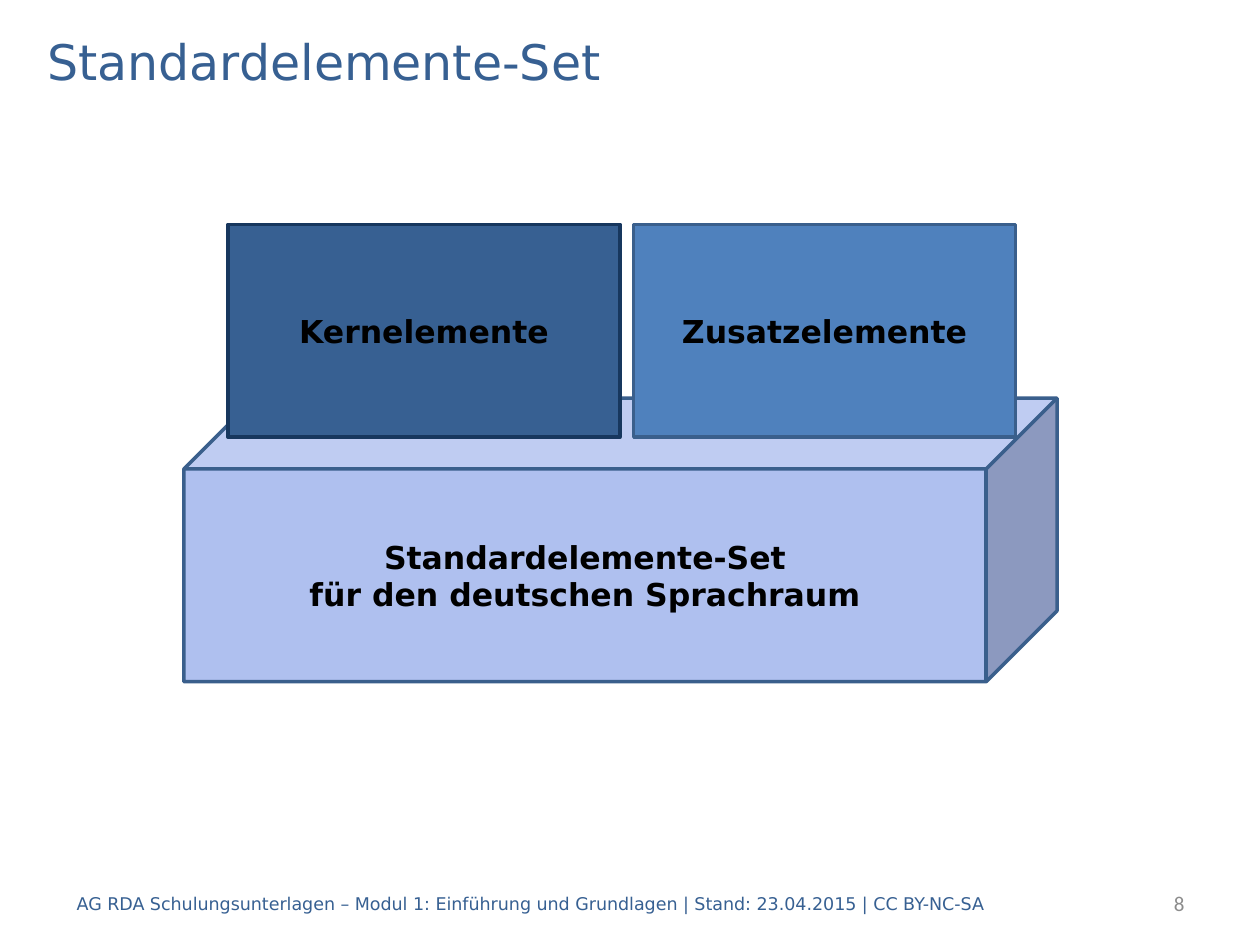
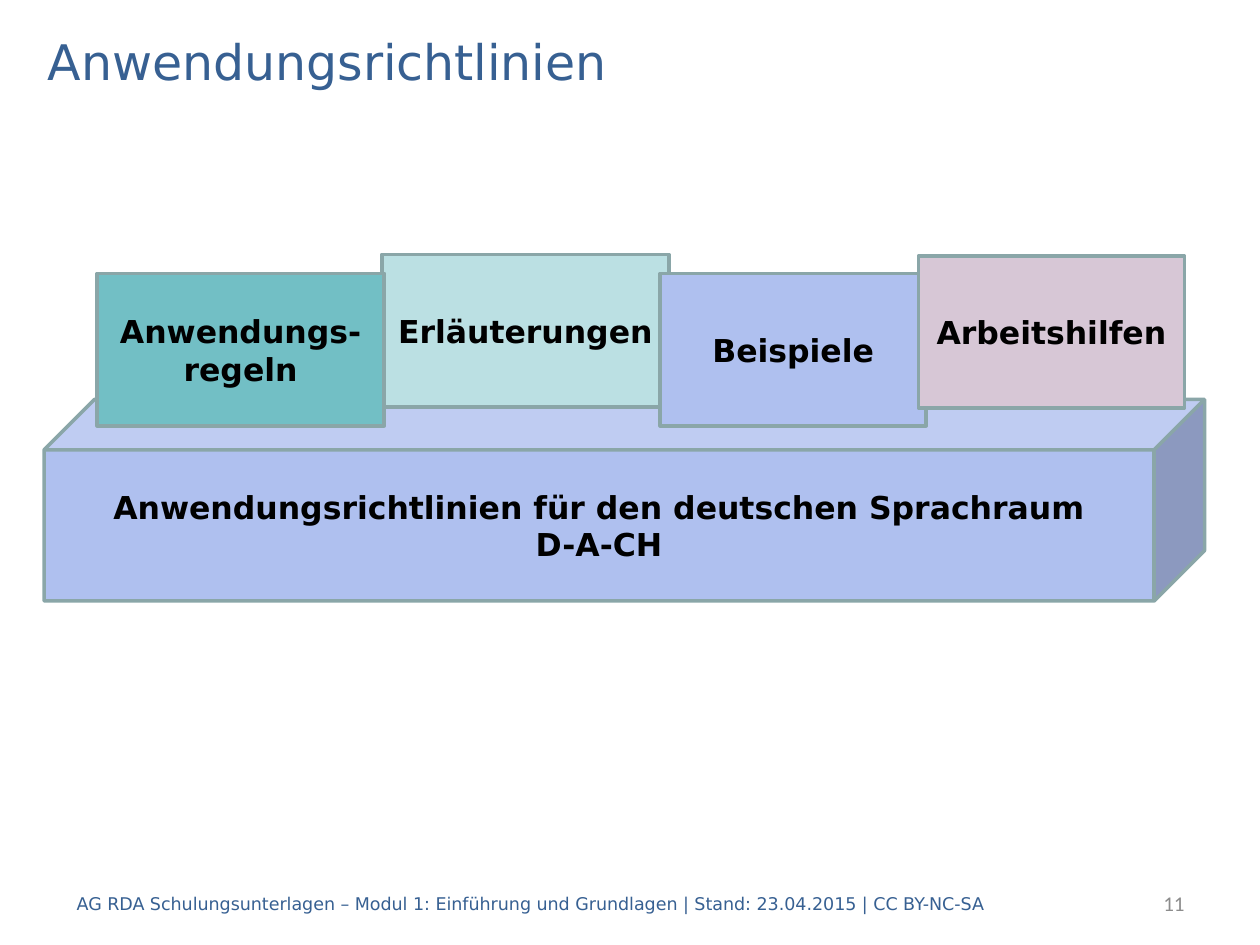
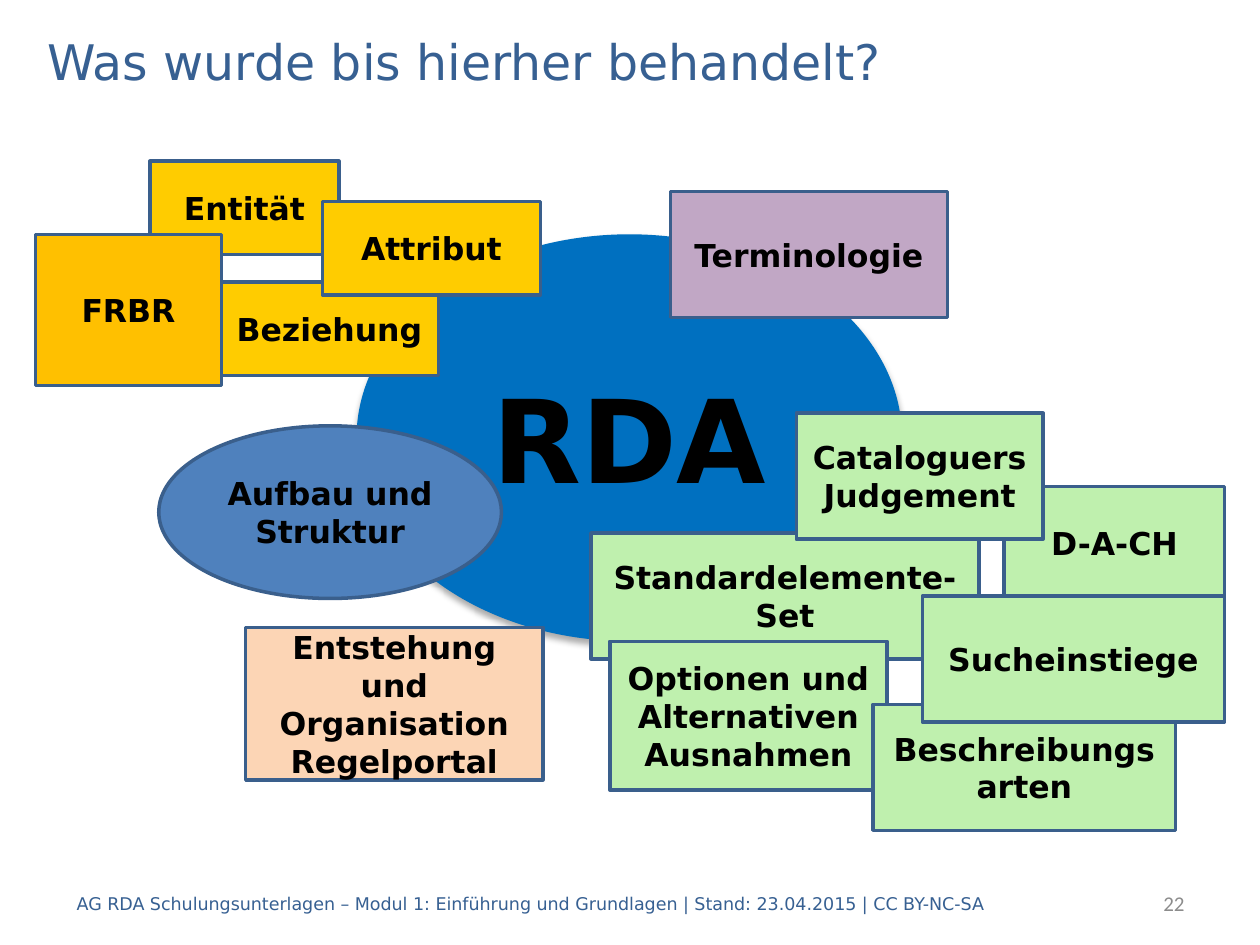
from typing import NamedTuple

from lxml.etree import SubElement
from pptx import Presentation
from pptx.dml.color import RGBColor
from pptx.enum.shapes import MSO_SHAPE
from pptx.enum.text import MSO_ANCHOR, PP_ALIGN
from pptx.oxml.ns import qn
from pptx.util import Inches, Pt

# Shared style
FONT = "DejaVu Sans"
BLUE = "376092"
EDGE = "3A5F8C"
TEAL = "8AA6A8"
LILAC = "AFC0EF"
STEEL = "4F81BD"
GOLD = "FFCC00"
GREEN = "BFF0AE"
GRAY = "8C8C8C"
BLACK = "000000"
FOOTER = ("AG RDA Schulungsunterlagen – Modul 1: Einführung und Grundlagen"
          " | Stand: 23.04.2015 | CC BY-NC-SA")

RECT = MSO_SHAPE.RECTANGLE
CUBE = MSO_SHAPE.CUBE
OVAL = MSO_SHAPE.OVAL


class Block(NamedTuple):
    text: str
    left: float
    top: float
    width: float
    height: float
    fill: str
    line: str | None = EDGE
    kind: MSO_SHAPE = RECT
    size: int = 18


class Page(NamedTuple):
    title: str
    number: int
    blocks: list[Block]


def color(code: str) -> RGBColor:
    return RGBColor.from_string(code)


def write(shape, text: str, size: int, code: str, align: PP_ALIGN,
          font: str = FONT, bold: bool = False) -> None:
    frame = shape.text_frame
    frame.text = text
    frame.word_wrap = True
    frame.vertical_anchor = MSO_ANCHOR.MIDDLE
    for para in frame.paragraphs:
        para.alignment = align
        for run in para.runs:
            run.font.name = font
            run.font.size = Pt(size)
            run.font.bold = bold
            run.font.color.rgb = color(code)


def label(slide, text: str, left: float, top: float, width: float,
          height: float, size: int, code: str = BLUE,
          align: PP_ALIGN = PP_ALIGN.LEFT, font: str = FONT) -> None:
    box = slide.shapes.add_textbox(Inches(left), Inches(top),
                                   Inches(width), Inches(height))
    write(box, text, size, code, align, font)


def shade(shape) -> None:
    """Give the shape a soft shadow straight below it."""
    effects = shape._element.spPr.find(qn("a:effectLst"))
    outer = SubElement(effects, qn("a:outerShdw"), blurRad=str(Pt(3.5)),
                       dist=str(Pt(2.2)), dir="5400000", rotWithShape="0")
    tone = SubElement(outer, qn("a:srgbClr"), val=BLACK)
    SubElement(tone, qn("a:alpha"), val="32000")


def draw(slide, block: Block) -> None:
    shape = slide.shapes.add_shape(
        block.kind, Inches(block.left), Inches(block.top),
        Inches(block.width), Inches(block.height))
    shape.shadow.inherit = False
    shape.fill.solid()
    shape.fill.fore_color.rgb = color(block.fill)
    if block.line:
        shape.line.color.rgb = color(block.line)
        shape.line.width = Pt(2)
    else:
        shape.line.fill.background()
        shade(shape)
    write(shape, block.text, block.size, BLACK, PP_ALIGN.CENTER, bold=True)


# Blocks are listed from back to front
PAGES = [
    Page("Standardelemente-Set", 8, [
        Block("Standardelemente-Set\nfür den deutschen Sprachraum",
              1.46, 3.16, 6.93, 2.25, LILAC, kind=CUBE),
        Block("Zusatzelemente", 5.03, 1.78, 3.03, 1.69, STEEL),
        Block("Kernelemente", 1.81, 1.78, 3.11, 1.69, BLUE, "17375E"),
    ]),
    Page("Anwendungsrichtlinien", 11, [
        Block("Anwendungsrichtlinien für den deutschen Sprachraum\nD-A-CH",
              0.35, 3.17, 9.21, 1.6, LILAC, TEAL, CUBE),
        Block("Erläuterungen", 3.03, 2.02, 2.28, 1.21, "BBE0E3", TEAL),
        Block("Beispiele", 5.24, 2.17, 2.11, 1.21, LILAC, TEAL),
        Block("Arbeitshilfen", 7.29, 2.03, 2.11, 1.21, "D7C7D6", TEAL),
        Block("Anwendungs-regeln", 0.77, 2.17, 2.28, 1.21, "72BFC5", TEAL),
    ]),
    Page("Was wurde bis hierher behandelt?", 22, [
        Block("RDA", 2.83, 1.86, 4.33, 3.23, "0070C0", None, OVAL, 66),
        Block("Terminologie", 5.32, 1.52, 2.2, 1, "C1A7C5"),
        Block("Aufbau und Struktur", 1.26, 3.38, 2.72, 1.37, STEEL,
              kind=OVAL),
        Block("Entität", 1.19, 1.28, 1.5, 0.74, GOLD),
        Block("Beziehung", 1.75, 2.24, 1.73, 0.74, GOLD),
        Block("Attribut", 2.56, 1.6, 1.73, 0.74, GOLD),
        Block("Standardelemente-Set", 4.69, 4.23, 3.08, 1, GREEN),
        Block("D-A-CH", 7.97, 3.86, 1.75, 0.89, GREEN),
        Block("Entstehung und Organisation\nRegelportal",
              1.95, 4.98, 2.36, 1.21, "FCD5B5"),
        Block("Optionen und Alternativen\nAusnahmen",
              4.84, 5.09, 2.2, 1.18, GREEN),
        Block("Beschreibungsarten", 6.93, 5.59, 2.4, 1, GREEN),
        Block("Sucheinstiege", 7.32, 4.73, 2.4, 1, GREEN),
        Block("FRBR", 0.28, 1.86, 1.48, 1.2, "FFC000"),
        Block("Cataloguers Judgement", 6.32, 3.28, 1.96, 1, GREEN),
    ]),
]


def build(deck, page: Page) -> None:
    slide = deck.slides.add_slide(deck.slide_layouts[6])
    # Title, page number and footer
    label(slide, page.title, 0.28, 0.2, 9.45, 0.56, 28)
    label(slide, str(page.number), 7.91, 6.97, 1.59, 0.4, 12, GRAY,
          PP_ALIGN.RIGHT, "Calibri")
    label(slide, FOOTER, 0.51, 6.97, 7.95, 0.4, 10)
    # Diagram
    for block in page.blocks:
        draw(slide, block)


def main() -> None:
    deck = Presentation()
    deck.slide_width = Inches(10)
    deck.slide_height = Inches(7.5)
    for page in PAGES:
        build(deck, page)
    deck.save("out.pptx")


if __name__ == "__main__":
    main()
